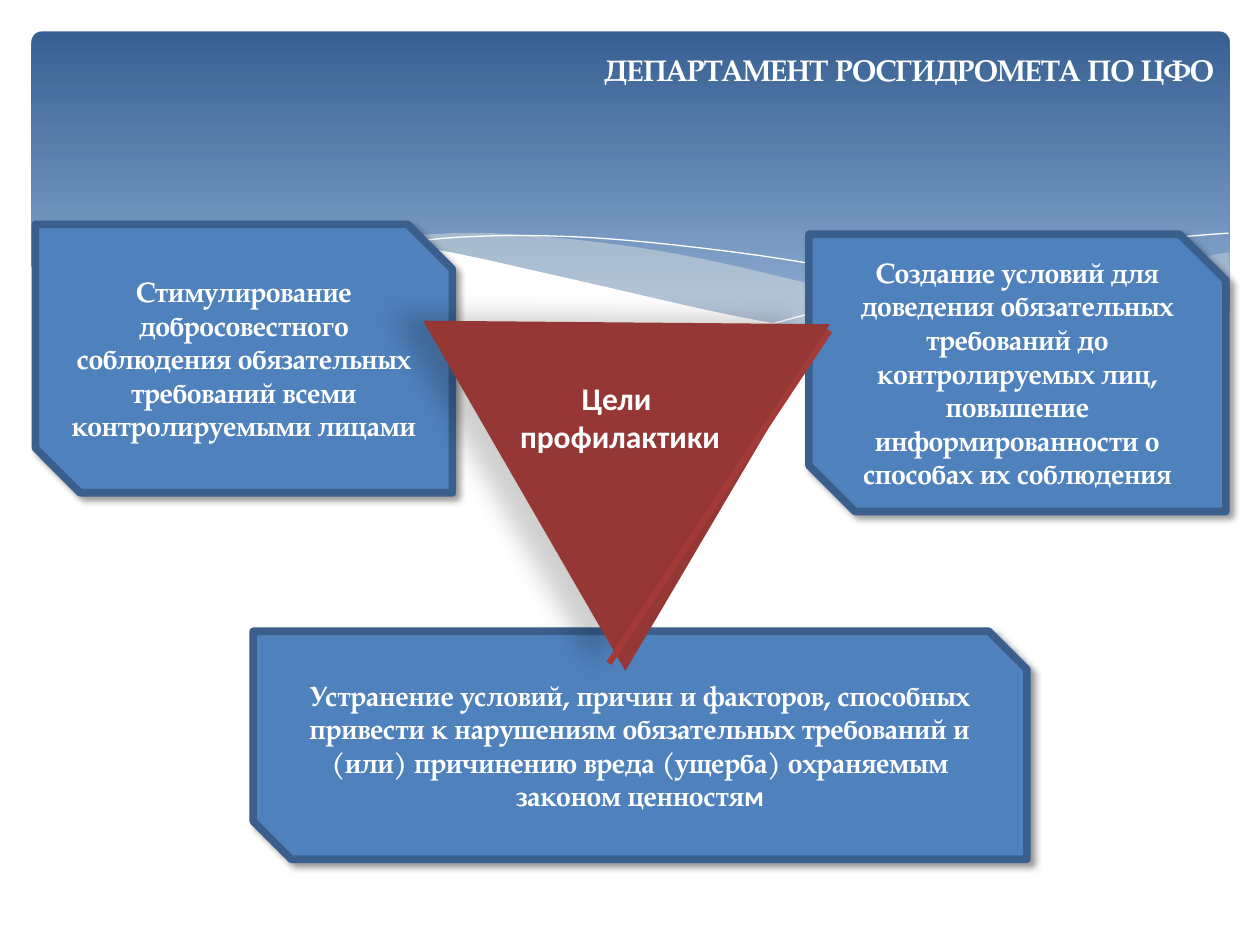
from lxml import etree
from pptx import Presentation
from pptx.dml.color import RGBColor
from pptx.enum import shapes as kinds, text as layout
from pptx.oxml import ns
from pptx.util import Pt

COLORS = {
    "sky_top": "376092", "sky_bottom": "95B3D7", "wave": "EEECE1",
    "white": "FFFFFF", "box": "4F81BD", "box_line": "3A5F8C",
    "triangle": "953735", "edge": "A33A38", "shadow": "000000",
}
SERIF, SANS = "TeX Gyre Pagella", "Calibri"
CENTER, RIGHT = layout.PP_ALIGN.CENTER, layout.PP_ALIGN.RIGHT

# Wave edges, as points that a smooth curve passes through
RIGHT_WAVE = [
    [(702.7, 144), (663, 151.2), (619.9, 160.6), (560.9, 174.2), (475.9, 190.8)],
    [(475.9, 190.8), (517.7, 195.8), (562.3, 199.4), (593.3, 199.4),
     (627.8, 197.3), (663, 190.8), (702.7, 177.8)],
]
LEFT_WAVE = [
    [(643, 196.6), (581, 187.2), (508.3, 172.8), (452.9, 159.8), (399.6, 147.6),
     (352.1, 139.7), (302.4, 134.6), (259.9, 133.2), (205.9, 137.5)],
    [(205.9, 137.5), (260.6, 146.2), (323.3, 159.8), (407.5, 178.6), (468, 190.1),
     (519.8, 197.3), (573.1, 200.2), (610.6, 199.4), (643, 196.6)],
]
LONG_LINE = [[(222.5, 140.4), (254.2, 136.1), (299.5, 134.6), (352.1, 136.8),
              (419, 144), (478.8, 153.4), (547.2, 167.8), (598.3, 180.7),
              (653, 195.8)]]
SHORT_LINE = [[(441.4, 185), (500.4, 169.2), (558.7, 155.5), (601.9, 146.9),
               (644.4, 139.7), (675.4, 135.4), (702, 133.2)]]
WHITE_SHEET = [
    [(703.4, 177.1), (662.4, 190.8), (621.4, 197.3), (582.5, 199.4),
     (535.7, 197.3), (481, 190.8), (416.9, 180), (321.8, 158.4), (244.8, 141.8),
     (180, 133.9), (127.4, 132.5), (76.3, 136.1), (37.4, 144.7), (16.6, 153.4)],
    [(16.6, 236.9), (703.4, 236.9)],
]

# Goals: position and size, then text runs with their fonts
GOALS = [
    ((20.2, 128.2, 238.3, 153.4),
     [("Стимулирование добросовестного соблюдения обязательных требований "
       "всеми контролируемыми лицами", SERIF)]),
    ((462.2, 133.9, 238.3, 158.4),
     [("Создание условий для доведения обязательных требований до "
       "контролируемых лиц, повышение информированности о способах их "
       "соблюдения", SERIF)]),
    ((144.7, 360.7, 442.1, 130.3),
     [("Устранение условий, причин и факторов, способных привести к "
       "нарушениям обязательных требований и (или) причинению вреда (ущерба) "
       "охраняемым законом ценностя", SERIF), ("м", SANS)]),
]


def rgb(name):
    return RGBColor.from_string(COLORS[name])


def smooth(points, steps=4):
    """Catmull-Rom curve through the points."""
    padded = [points[0], *points, points[-1]]
    curve = [points[0]]
    for a, b, c, d in zip(padded, padded[1:], padded[2:], padded[3:]):
        for step in range(1, steps + 1):
            t = step / steps
            curve.append(tuple(
                0.5 * (2 * q + (r - p) * t + (2 * p - 5 * q + 4 * r - s) * t ** 2
                       + (3 * q - p - 3 * r + s) * t ** 3)
                for p, q, r, s in zip(a, b, c, d)))
    return curve


def add_wave(slide, edges, fill=None, opacity=100):
    """Filled wave, or an open white hairline when there is no fill."""
    outline = [(Pt(x), Pt(y)) for edge in edges
               for x, y in (smooth(edge) if len(edge) > 2 else edge)]
    builder = slide.shapes.build_freeform(*outline[0])
    builder.add_line_segments(outline[1:], close=fill is not None)
    wave = builder.convert_to_shape()
    wave.shadow.inherit = False
    if fill is None:
        wave.fill.background()
        wave.line.color.rgb = rgb("white")
        wave.line.width = Pt(0)
        return
    wave.line.fill.background()
    wave.fill.solid()
    wave.fill.fore_color.rgb = rgb(fill)
    if opacity < 100:
        color = wave.fill._xPr.find(".//" + ns.qn("a:srgbClr"))
        etree.SubElement(color, ns.qn("a:alpha"), val=str(opacity * 1000))


def add_panel(slide, kind, frame, fill):
    panel = slide.shapes.add_shape(kind, *map(Pt, frame))
    panel.shadow.inherit = False
    panel.fill.solid()
    panel.fill.fore_color.rgb = rgb(fill)
    panel.line.fill.background()
    return panel


def cast_shadow(panel, opacity, blur, distance, angle):
    effects = panel._element.spPr.find(ns.qn("a:effectLst"))
    shadow = etree.SubElement(
        effects, ns.qn("a:outerShdw"), blurRad=str(Pt(blur)),
        dist=str(Pt(distance)), dir=str(angle * 60000), rotWithShape="0")
    color = etree.SubElement(shadow, ns.qn("a:srgbClr"), val=COLORS["shadow"])
    etree.SubElement(color, ns.qn("a:alpha"), val=str(opacity * 1000))


def write(frame, paragraphs, size, align):
    """Each paragraph is a list of (text, font) runs."""
    frame.word_wrap = True
    for i, runs in enumerate(paragraphs):
        paragraph = frame.add_paragraph() if i else frame.paragraphs[0]
        paragraph.alignment = align
        for words, font in runs:
            run = paragraph.add_run()
            run.text = words
            run.font.name, run.font.size, run.font.bold = font, Pt(size), True
            run.font.color.rgb = rgb("white")


def add_label(slide, frame, paragraphs, size, align):
    label = slide.shapes.add_textbox(*map(Pt, frame))
    write(label.text_frame, paragraphs, size, align)


def add_sky(slide):
    sky = add_panel(slide, kinds.MSO_SHAPE.ROUNDED_RECTANGLE,
                    (18, 18, 684.7, 194.4), "sky_top")
    sky.adjustments[0] = 0.03
    sky.fill.gradient()
    sky.fill.gradient_angle = 270
    stops = zip(sky.fill.gradient_stops, ("sky_top", "sky_bottom"), (0, 0.9))
    for stop, color, position in stops:
        stop.color.rgb = rgb(color)
        stop.position = position


def add_goal(slide, frame, runs):
    goal = add_panel(slide, kinds.MSO_SHAPE.SNIP_2_DIAG_RECTANGLE, frame, "box")
    goal.line.color.rgb = rgb("box_line")
    goal.line.width = Pt(4.33)
    cast_shadow(goal, 40, 4, 3, 45)
    goal.text_frame.vertical_anchor = layout.MSO_ANCHOR.MIDDLE
    write(goal.text_frame, [runs], 16, CENTER)


def add_triangle(slide):
    triangle = add_panel(slide, kinds.MSO_SHAPE.ISOSCELES_TRIANGLE,
                         (270.7, 133.2, 231.1, 200.2), "triangle")
    triangle.adjustments[0] = 0.51
    triangle.rotation = 60
    cast_shadow(triangle, 18, 14.5, 19, 192)
    # Lit right-hand edge
    edge = slide.shapes.add_connector(
        kinds.MSO_CONNECTOR.STRAIGHT, Pt(474), Pt(189), Pt(348), Pt(379))
    edge.line.color.rgb = rgb("edge")
    edge.line.width = Pt(3.5)
    etree.SubElement(edge._element.spPr, ns.qn("a:effectLst"))


def main():
    deck = Presentation()
    deck.slide_width, deck.slide_height = Pt(720), Pt(540)
    slide = deck.slides.add_slide(deck.slide_layouts[6])

    # Background
    add_sky(slide)
    add_wave(slide, RIGHT_WAVE, "wave", 29)
    add_wave(slide, LEFT_WAVE, "wave", 40)
    add_wave(slide, LONG_LINE)
    add_wave(slide, SHORT_LINE)
    add_wave(slide, WHITE_SHEET, "white")

    # Goals and header
    for frame, runs in GOALS:
        add_goal(slide, frame, runs)
    add_label(slide, (275, 25.9, 425.5, 48.2),
              [[("ДЕПАРТАМЕНТ РОСГИДРОМЕТА ПО ЦФО", SERIF)]], 17, RIGHT)

    # Central triangle
    add_triangle(slide)
    add_label(slide, (257.8, 213.1, 193, 51.1),
              [[("Цели ", SANS)], [("профилактики", SANS)]], 18, CENTER)

    deck.save("out.pptx")


if __name__ == "__main__":
    main()
